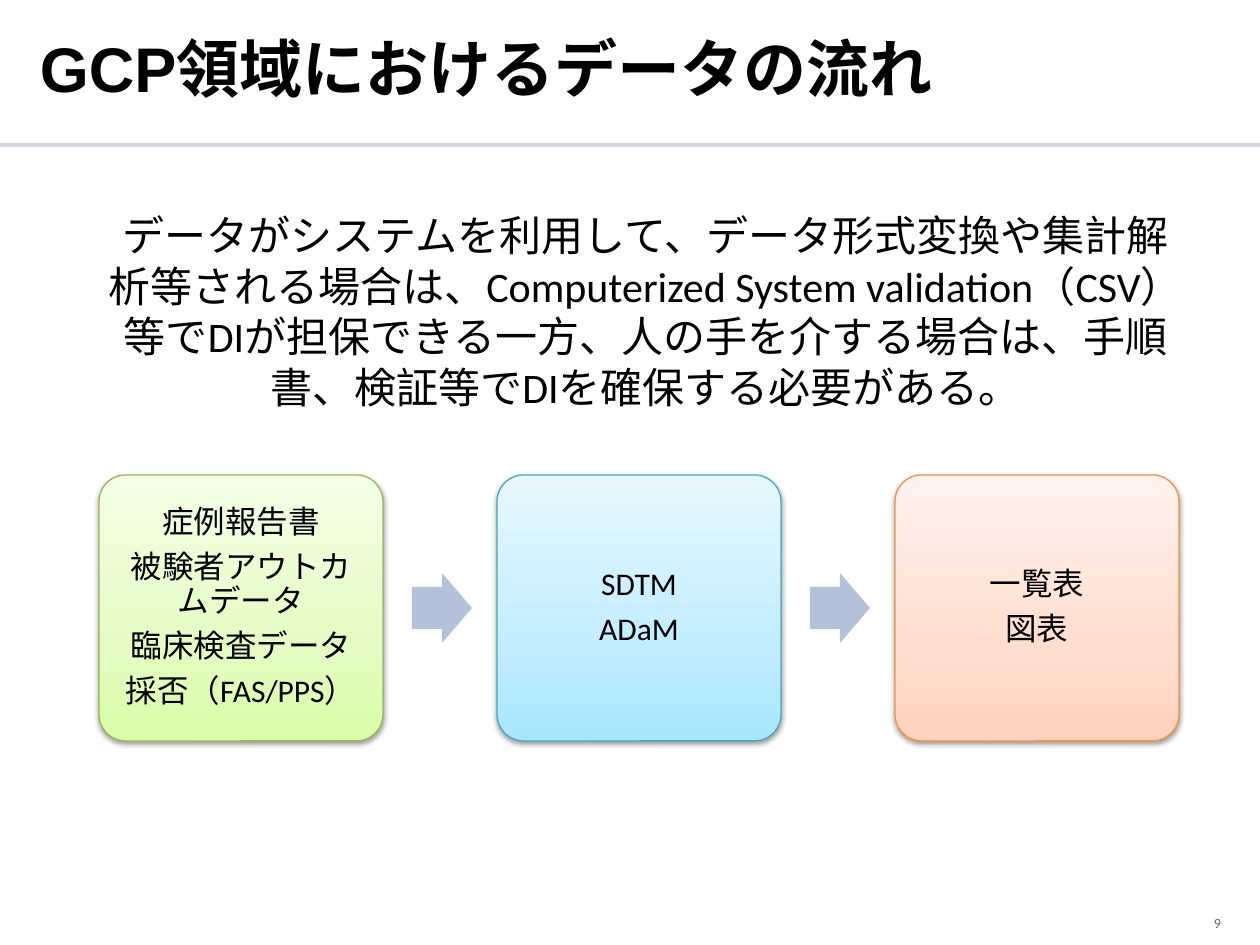
"""Build a slide on the flow of data in the GCP field."""
import lxml.etree
import copy
import pptx
import pptx.dml.color
import pptx.enum.shapes
import pptx.enum.text
import pptx.oxml.ns
import pptx.util

TITLE = "GCP領域におけるデータの流れ"
BODY = (
    "データがシステムを利用して、データ形式変換や集計解析等される場合は、"
    "Computerized System validation（CSV）等でDIが担保できる一方、"
    "人の手を介する場合は、手順書、検証等でDIを確保する必要がある。"
)
PAGE = "9"
STEPS = [
    (["症例報告書", "被験者アウトカムデータ", "臨床検査データ", "採否（FAS/PPS）"],
     "98B955", ["DAFDA7", "E4FCC2", "F5FFE7"]),
    (["SDTM", "ADaM"], "46AAC5", ["A7E6FF", "C1EDFF", "E7F8FF"]),
    (["一覧表", "図表"], "F69240", ["FFD2BD", "FFDED0", "FFF2ED"]),
]
STOPS = [0, 0.35, 1]
LEFT, TOP, WIDE, HIGH, PITCH = 99, 475, 284, 266, 398
ARROW_W, ARROW_H, ARROW_GAP = 60, 70, 29

ALIGN = pptx.enum.text.PP_ALIGN
ANCHOR = pptx.enum.text.MSO_ANCHOR
SHAPE = pptx.enum.shapes.MSO_SHAPE
qn = pptx.oxml.ns.qn


def px(n):
    return round(n * 914400 / 126)


def rgb(code):
    return pptx.dml.color.RGBColor.from_string(code)


def write(shape, lines, size, align, anchor, pads, face="Calibri", color="000000", bold=False):
    frame = shape.text_frame
    frame.word_wrap = True
    frame.auto_size = pptx.enum.text.MSO_AUTO_SIZE.NONE
    frame.vertical_anchor = anchor
    frame.margin_left = frame.margin_right = px(pads[0])
    frame.margin_top = frame.margin_bottom = px(pads[1])
    frame.text = "\n".join(lines)
    for para in frame.paragraphs:
        para.alignment = align
        font = para.font
        font.name, font.size, font.bold = face, pptx.util.Pt(size), bold
        font.color.rgb = rgb(color)
    return frame.paragraphs


def add_text(slide, area, *style):
    box = slide.shapes.add_textbox(*map(px, area))
    write(box, *style)


def add_line(slide, y, color, width):
    line = slide.shapes.add_connector(
        pptx.enum.shapes.MSO_CONNECTOR.STRAIGHT, 0, px(y), px(1260), px(y))
    line.line.color.rgb = rgb(color)
    line.line.width = pptx.util.Pt(width)
    lxml.etree.SubElement(line._element.spPr, qn("a:effectLst"))


def shade(shape, colors):
    fill = shape.fill
    fill.gradient()
    fill.gradient_angle = 90
    stops = shape._element.spPr.find(".//" + qn("a:gsLst"))
    stops.insert(1, copy.deepcopy(stops[0]))
    for stop, place, color in zip(fill.gradient_stops, STOPS, colors):
        stop.position = place
        stop.color.rgb = rgb(color)


def add_shadow(shape):
    effects = shape._element.spPr.find(qn("a:effectLst"))
    outer = lxml.etree.SubElement(
        effects, qn("a:outerShdw"), blurRad="40000", dist="20000",
        dir="5400000", rotWithShape="0")
    color = lxml.etree.SubElement(outer, qn("a:srgbClr"), val="000000")
    lxml.etree.SubElement(color, qn("a:alpha"), val="38000")


def add_step(slide, x, lines, edge, colors):
    box = slide.shapes.add_shape(SHAPE.ROUNDED_RECTANGLE, *map(px, (x, TOP, WIDE, HIGH)))
    box.adjustments[0] = 0.1
    box.shadow.inherit = False
    shade(box, colors)
    box.line.color.rgb = rgb(edge)
    box.line.width = pptx.util.Pt(0.75)
    add_shadow(box)
    for para in write(box, lines, 18, ALIGN.CENTER, ANCHOR.MIDDLE, (14, 14)):
        para.line_spacing = 0.9
        para.space_after = pptx.util.Pt(6.3)


def add_arrow(slide, x):
    y = TOP + (HIGH - ARROW_H) / 2
    arrow = slide.shapes.add_shape(SHAPE.RIGHT_ARROW, *map(px, (x, y, ARROW_W, ARROW_H)))
    arrow.adjustments[0] = 0.6
    arrow.adjustments[1] = 0.5
    arrow.shadow.inherit = False
    arrow.fill.solid()
    arrow.fill.fore_color.rgb = rgb("B3C1DB")
    arrow.line.fill.background()


def main():
    deck = pptx.Presentation()
    deck.slide_width, deck.slide_height = px(1260), px(945)
    slide = deck.slides.add_slide(deck.slide_layouts[5])
    title = slide.shapes.title
    title.left, title.top, title.width, title.height = map(px, (40, 23, 984, 89))
    write(title, [TITLE], 36, ALIGN.LEFT, ANCHOR.TOP, (0, 6), "Arial", "000000", True)
    add_line(slide, 145, "D4D7E2", 2)
    add_text(slide, (95, 204, 1101, 217), [BODY], 24, ALIGN.CENTER, ANCHOR.TOP, (13, 6))
    add_text(slide, (927, 898, 294, 50), [PAGE], 8, ALIGN.RIGHT, ANCHOR.MIDDLE,
             (0, 0), "Calibri", "636672")
    for i, step in enumerate(STEPS):
        x = LEFT + i * PITCH
        add_step(slide, x, *step)
        if i < len(STEPS) - 1:
            add_arrow(slide, x + WIDE + ARROW_GAP)
    deck.save("out.pptx")


if __name__ == "__main__":
    main()
